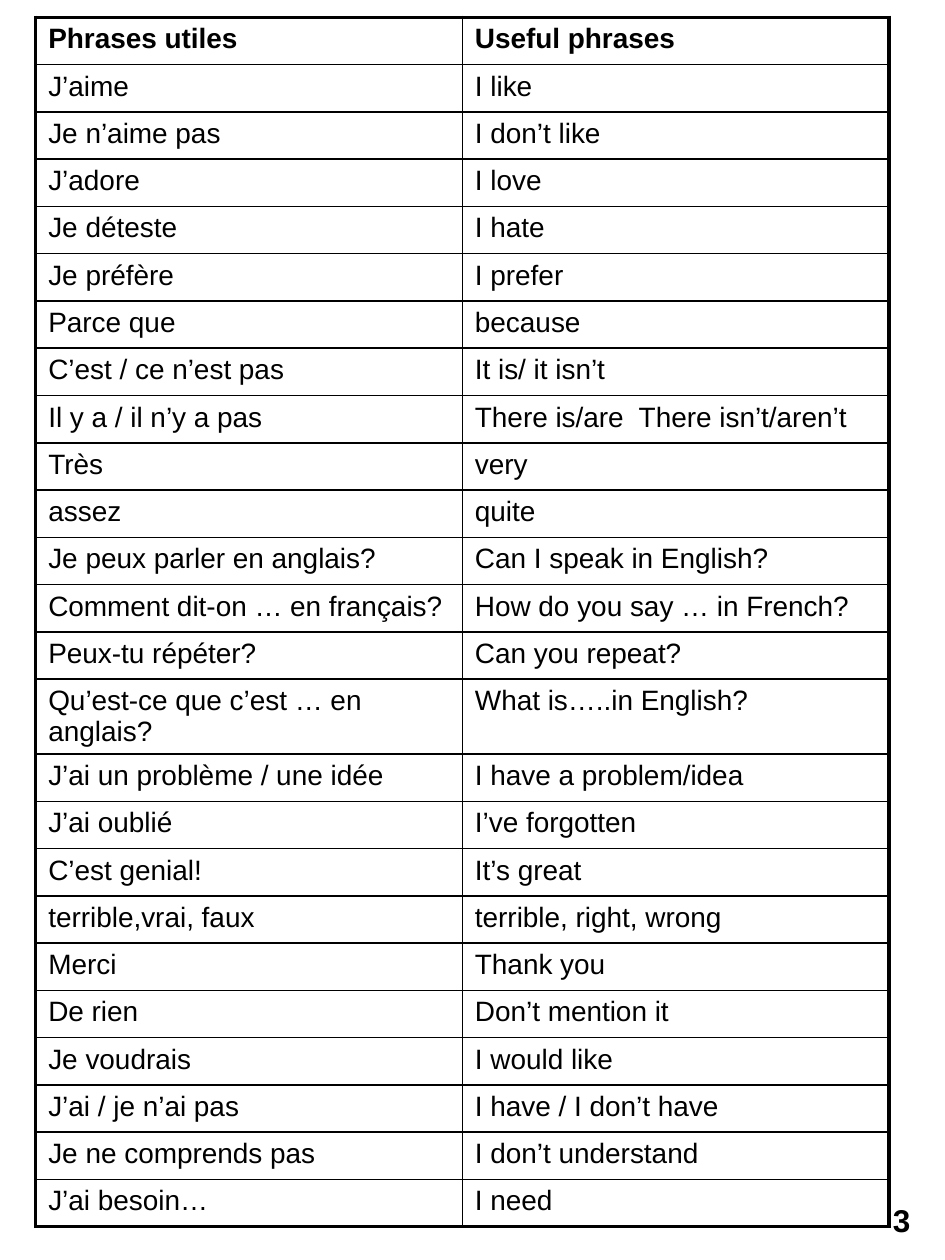
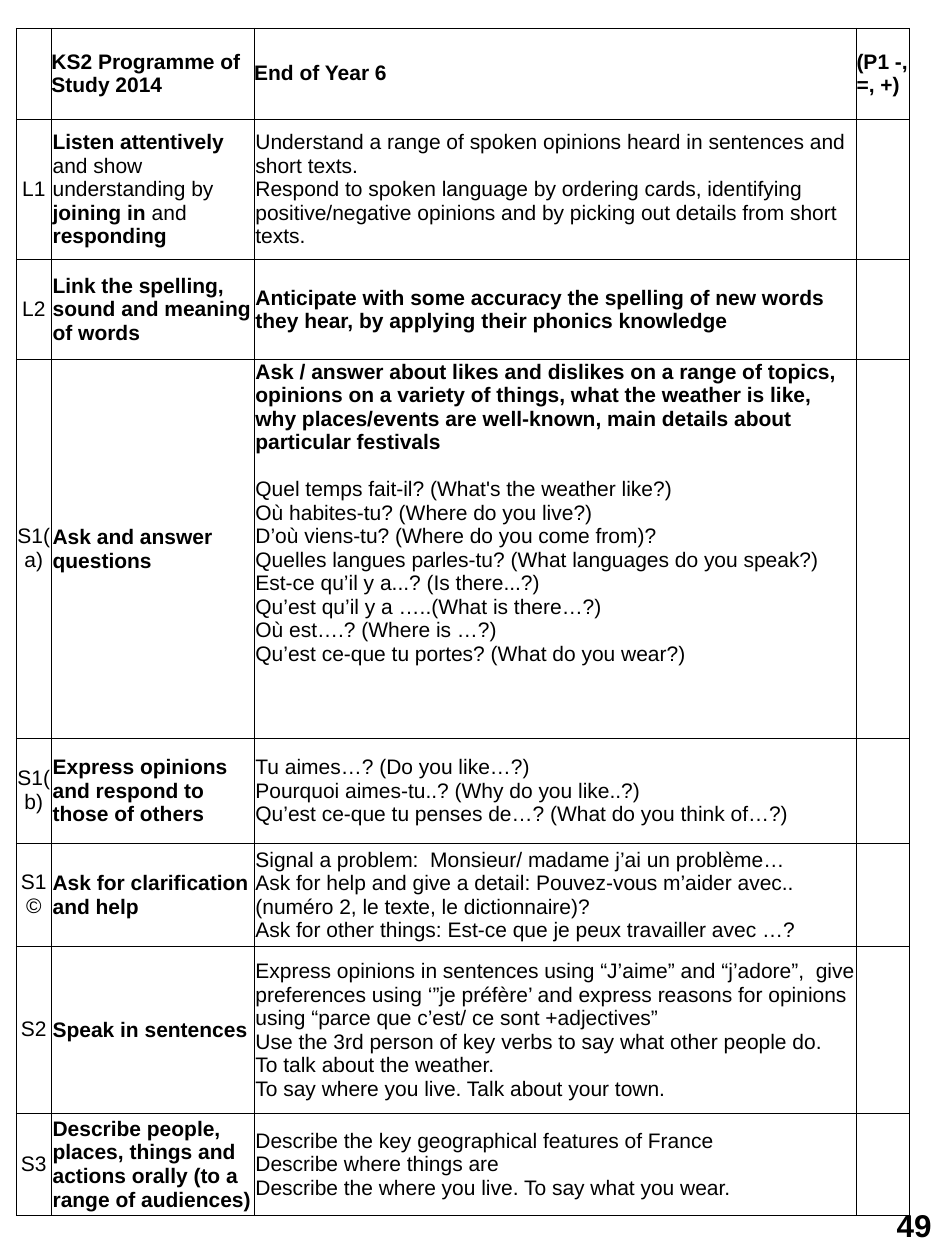
from lxml import etree
from pptx import Presentation
from pptx.dml.color import RGBColor
from pptx.enum.shapes import MSO_SHAPE
from pptx.enum.text import MSO_ANCHOR, PP_ALIGN
from pptx.oxml.ns import qn
from pptx.util import Pt

ROUND_RECT = MSO_SHAPE.ROUNDED_RECTANGLE
TOP, MIDDLE = MSO_ANCHOR.TOP, MSO_ANCHOR.MIDDLE
LEFT, CENTER = PP_ALIGN.LEFT, PP_ALIGN.CENTER
BLACK = RGBColor(0, 0, 0)
FONT = "Arial"

PHRASES = [
    ("*Phrases utiles*", "*Useful phrases*"),
    ("J’aime", "I like"),
    ("Je n’aime pas", "I don’t like"),
    ("J’adore", "I love"),
    ("Je déteste", "I hate"),
    ("Je préfère", "I prefer"),
    ("Parce que", "because"),
    ("C’est / ce n’est pas", "It is/ it isn’t"),
    ("Il y a / il n’y a pas", "There is/are  There isn’t/aren’t"),
    ("Très", "very"),
    ("assez", "quite"),
    ("Je peux parler en anglais?", "Can I speak in English?"),
    ("Comment dit-on … en français?", "How do you say … in French?"),
    ("Peux-tu répéter?", "Can you repeat?"),
    ("Qu’est-ce que c’est … en anglais?", "What is…..in English?"),
    ("J’ai un problème / une idée", "I have a problem/idea"),
    ("J’ai oublié", "I’ve forgotten"),
    ("C’est genial!", "It’s great"),
    ("terrible,vrai, faux", "terrible, right, wrong"),
    ("Merci", "Thank you"),
    ("De rien", "Don’t mention it"),
    ("Je voudrais", "I would like"),
    ("J’ai / je n’ai pas", "I have / I don’t have"),
    ("Je ne comprends pas", "I don’t understand"),
    ("J’ai besoin…", "I need"),
]
PHRASE_COLS = [243.8, 243.8]
PHRASE_ROW = 27.03
WRAPPED_ROW, WRAPPED_HEIGHT = 14, 42.3

PROGRAMME = [
    (52, "", "*KS2 Programme of Study 2014*", ["*End of Year 6*"], "*(P1 -, =, +)*"),
    (80, "L1", "*Listen attentively *and show understanding by* joining in* and *responding*", [
        "Understand a range of spoken opinions heard in sentences and short texts.",
        "Respond to spoken language by ordering cards, identifying positive/negative "
        "opinions and by picking out details from short texts.",
    ], ""),
    (57.1, "L2", "*Link the spelling, sound and meaning of words*", [
        "*Anticipate with some accuracy the spelling of new words they hear, "
        "by applying their phonics knowledge*",
    ], ""),
    (216.6, "S1(a)", "*Ask and answer questions*", [
        "*Ask / answer about likes and dislikes on a range of topics, opinions on a "
        "variety of things, what the weather is like, why places/events are "
        "well-known, main details about particular festivals*",
        "Quel temps fait-il? (What's the weather like?)",
        "Où habites-tu? (Where do you live?)",
        "D’où viens-tu? (Where do you come from)?",
        "Quelles langues parles-tu? (What languages do you speak?)",
        "Est-ce qu’il y a...? (Is there...?)",
        "Qu’est qu’il y a …..(What is there…?)",
        "Où est….? (Where is …?)",
        "Qu’est ce-que tu portes? (What do you wear?)",
    ], ""),
    (60, "S1(b)", "*Express opinions and respond to those of others*", [
        "Tu aimes…? (Do you like…?)",
        "Pourquoi aimes-tu..? (Why do you like..?)",
        "Qu’est ce-que tu penses de…? (What do you think of…?)",
    ], ""),
    (58.9, "S1©", "*Ask for clarification and help*", [
        "Signal a problem:  Monsieur/ madame j’ai un problème…",
        "Ask for help and give a detail: Pouvez-vous m’aider avec..(numéro 2, "
        "le texte, le dictionnaire)?",
        "Ask for other things: Est-ce que je peux travailler avec …?",
    ], ""),
    (95.4, "S2", "*Speak in sentences*", [
        "Express opinions in sentences using “J’aime” and “j’adore”,  give preferences "
        "using ‘”je préfère’ and express reasons for opinions using “parce que c’est/ "
        "ce sont +adjectives”",
        "Use the 3rd person of key verbs to say what other people do.",
        "To talk about the weather.",
        "To say where you live. Talk about your town.",
    ], ""),
    (58.3, "S3", "*Describe people, places, things and actions orally (to a range of audiences)*", [
        "Describe the key geographical features of France",
        "Describe where things are",
        "Describe the where you live. To say what you wear.",
    ], ""),
]
PROGRAMME_COLS = [20.2, 115.9, 344.2, 30.2]
QUESTIONS_ROW, DETAIL_COL = 3, 2
QUESTIONS_GAP = 13.5


def style(p, size, align=LEFT):
    p.alignment = align
    p.font.name = FONT
    p.font.size = Pt(size)
    p.font.color.rgb = BLACK


def write_cell(cell, lines, size, align=LEFT):
    tf = cell.text_frame
    for i, line in enumerate(lines):
        p = tf.add_paragraph() if i else tf.paragraphs[0]
        style(p, size, align)
        for j, text in enumerate(line.split("*")):
            if text:
                r = p.add_run()
                r.text = text
                r.font.bold = j % 2 == 1


def add_border(cell, side, width):
    ln = etree.SubElement(cell._tc.get_or_add_tcPr(), qn("a:ln" + side), w=str(Pt(width)))
    fill = etree.SubElement(ln, qn("a:solidFill"))
    etree.SubElement(fill, qn("a:srgbClr"), val=str(BLACK))


def add_grid(s, left, top, cols, rows, outer, inner):
    table = s.shapes.add_table(len(rows), len(cols), Pt(left), Pt(top),
                               Pt(sum(cols)), Pt(sum(rows))).table
    table.first_row = table.horz_banding = False
    for column, width in zip(table.columns, cols):
        column.width = Pt(width)
    for row, height in zip(table.rows, rows):
        row.height = Pt(height)
    for i in range(len(rows)):
        for j in range(len(cols)):
            cell = table.cell(i, j)
            edges = {"L": j == 0, "R": j == len(cols) - 1,
                     "T": i == 0, "B": i == len(rows) - 1}
            for side, is_outer in edges.items():
                add_border(cell, side, outer if is_outer else inner)
            cell.fill.background()
    return table


def add_page_number(s, number, left, top):
    sp = s.shapes.add_shape(ROUND_RECT, Pt(left), Pt(top), Pt(39.6), Pt(33.8))
    sp.shadow.inherit = False
    sp.fill.background()
    sp.line.fill.background()
    tf = sp.text_frame
    tf.margin_left = tf.margin_right = tf.margin_top = tf.margin_bottom = 0
    tf.vertical_anchor = MIDDLE
    p = tf.paragraphs[0]
    style(p, 18, CENTER)
    p.font.bold = True
    p.add_run().text = number


def add_phrases_slide(prs):
    s = prs.slides.add_slide(prs.slide_layouts[6])
    heights = [PHRASE_ROW] * len(PHRASES)
    heights[WRAPPED_ROW] = WRAPPED_HEIGHT
    table = add_grid(s, 20.4, 9.9, PHRASE_COLS, heights, 2.25, 1)
    for i, phrases in enumerate(PHRASES):
        for j, text in enumerate(phrases):
            write_cell(table.cell(i, j), [text], 16)
    add_page_number(s, "3", 495.4, 680.4)


def add_programme_slide(prs):
    s = prs.slides.add_slide(prs.slide_layouts[6])
    heights = [row[0] for row in PROGRAMME]
    table = add_grid(s, 9.2, 16, PROGRAMME_COLS, heights, 0.25, 0.25)
    for i, (_, code, skill, details, mark) in enumerate(PROGRAMME):
        for j, lines in enumerate(([code], [skill], details, [mark])):
            cell = table.cell(i, j)
            inset = Pt(0.7) if i and j else 0
            cell.margin_left = cell.margin_right = cell.margin_top = inset
            cell.margin_bottom = 0
            cell.vertical_anchor = MIDDLE
            write_cell(cell, lines, 12, LEFT if j else CENTER)
    questions = table.cell(QUESTIONS_ROW, DETAIL_COL)
    questions.vertical_anchor = TOP
    questions.text_frame.paragraphs[1].space_before = Pt(QUESTIONS_GAP)
    add_page_number(s, "49", 502.6, 683.3)


def main():
    prs = Presentation()
    prs.slide_width, prs.slide_height = Pt(540), Pt(720)
    add_phrases_slide(prs)
    add_programme_slide(prs)
    prs.save("out.pptx")


if __name__ == "__main__":
    main()
